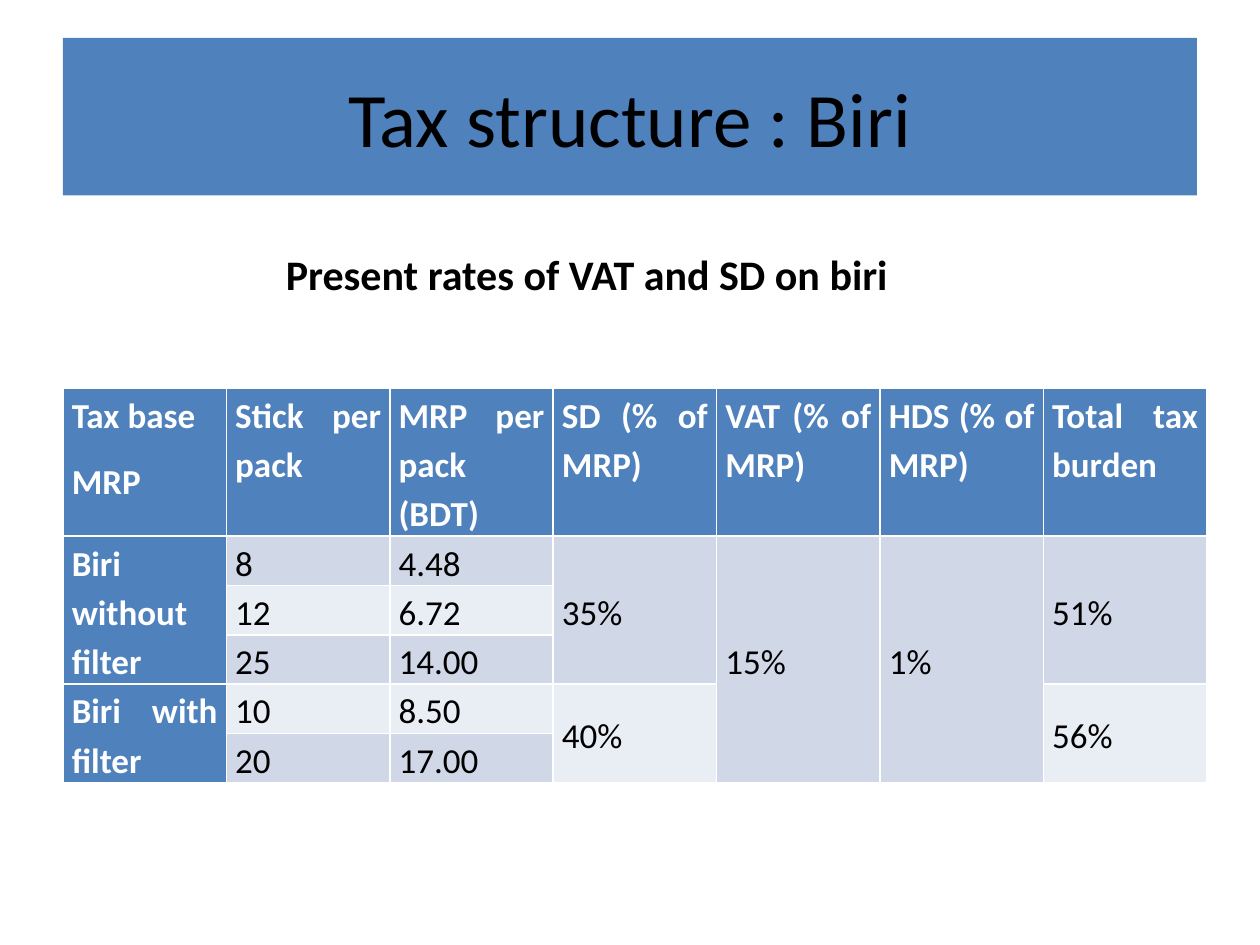
"""Build a slide showing the tax structure of biri as a table."""
from dataclasses import dataclass

from pptx import Presentation
from pptx import util as u
from pptx.dml.color import RGBColor
from pptx.enum import shapes, text

WIDTH, HEIGHT = u.Inches(10), u.Inches(7.5)
COLORS = {"blue": "4F81BD", "odd": "D0D8E8", "even": "E9EDF4",
          "black": "000000", "white": "FFFFFF"}
FONT = "Calibri"


@dataclass(frozen=True)
class Area:
    """Position and size as shares of the slide."""
    left: float
    top: float
    width: float
    height: float

    def lengths(self) -> tuple[int, int, int, int]:
        return (round(self.left * WIDTH), round(self.top * HEIGHT),
                round(self.width * WIDTH), round(self.height * HEIGHT))


@dataclass(frozen=True)
class Entry:
    """Text of a table cell, placed by row and column."""
    row: int
    column: int
    words: str
    rows: int = 1


TITLE = Area(0.05, 0.04, 0.9, 1 / 6)
SUBTITLE = Area(0.217, 0.256, 0.524, 0.067)
TABLE = Area(0.05, 0.411, 0.908, 0.39)
ROW_HEIGHTS = [1.08] + [0.37] * 5
HEADINGS = ["Tax base\nMRP", "Stick per pack", "MRP per pack (BDT)", "SD (% of MRP)",
            "VAT (% of MRP)", "HDS (% of MRP)", "Total tax burden"]
PACKS = [("8", "4.48"), ("12", "6.72"), ("25", "14.00"), ("10", "8.50"), ("20", "17.00")]
MERGED = [Entry(1, 0, "Biri without filter", 3), Entry(4, 0, "Biri with filter", 2),
          Entry(1, 3, "35%", 3), Entry(4, 3, "40%", 2),
          Entry(1, 4, "15%", 5), Entry(1, 5, "1%", 5),
          Entry(1, 6, "51%", 3), Entry(4, 6, "56%", 2)]


def color(name: str) -> RGBColor:
    return RGBColor.from_string(COLORS[name])


def style(para, size: int, ink: str, bold: bool = False) -> None:
    font = para.font
    font.name, font.size, font.bold = FONT, u.Pt(size), bold
    font.color.rgb = color(ink)


def add_title(page, words: str) -> None:
    box = page.shapes.add_shape(shapes.MSO_SHAPE.RECTANGLE, *TITLE.lengths())
    box.shadow.inherit = False
    box.fill.solid()
    box.fill.fore_color.rgb = color("blue")
    box.line.fill.background()
    frame = box.text_frame
    frame.text = words
    frame.vertical_anchor = text.MSO_ANCHOR.MIDDLE
    frame.paragraphs[0].alignment = text.PP_ALIGN.CENTER
    style(frame.paragraphs[0], 44, "black")


def add_subtitle(page, words: str) -> None:
    frame = page.shapes.add_textbox(*SUBTITLE.lengths()).text_frame
    frame.text = words
    frame.word_wrap = False
    frame.auto_size = text.MSO_AUTO_SIZE.SHAPE_TO_FIT_TEXT
    style(frame.paragraphs[0], 24, "black", bold=True)


def fill_cell(table, entry: Entry) -> None:
    cell = table.cell(entry.row, entry.column)
    heading = entry.row == 0 or entry.column == 0
    if entry.rows > 1:
        cell.merge(table.cell(entry.row + entry.rows - 1, entry.column))
        if not heading:
            cell.vertical_anchor = text.MSO_ANCHOR.MIDDLE
    cell.margin_left = cell.margin_right = u.Inches(0.07)
    cell.margin_top = cell.margin_bottom = 0
    cell.fill.solid()
    cell.fill.fore_color.rgb = color("blue" if heading else "odd" if entry.row % 2 else "even")
    cell.text = entry.words
    for para in cell.text_frame.paragraphs:
        para.alignment = text.PP_ALIGN.JUSTIFY
        para.line_spacing = 1.15
        para.space_after = u.Pt(10)
        style(para, 20, "white" if heading else "black", bold=heading)


def add_tax_table(page) -> None:
    table = page.shapes.add_table(len(ROW_HEIGHTS), len(HEADINGS), *TABLE.lengths()).table
    table.first_col = True
    for row, height in zip(table.rows, ROW_HEIGHTS):
        row.height = u.Inches(height)
    entries = [Entry(0, column, words) for column, words in enumerate(HEADINGS)]
    entries += [Entry(row, column, words) for row, pack in enumerate(PACKS, 1)
                for column, words in enumerate(pack, 1)]
    for entry in entries + MERGED:
        fill_cell(table, entry)
    table.cell(0, 0).text_frame.paragraphs[0].alignment = text.PP_ALIGN.LEFT


def main() -> None:
    deck = Presentation()
    deck.slide_width, deck.slide_height = WIDTH, HEIGHT
    page = deck.slides.add_slide(deck.slide_layouts[6])
    add_title(page, "Tax structure : Biri")
    add_tax_table(page)
    add_subtitle(page, "Present rates of VAT and SD on biri")
    deck.save("out.pptx")


if __name__ == "__main__":
    main()
